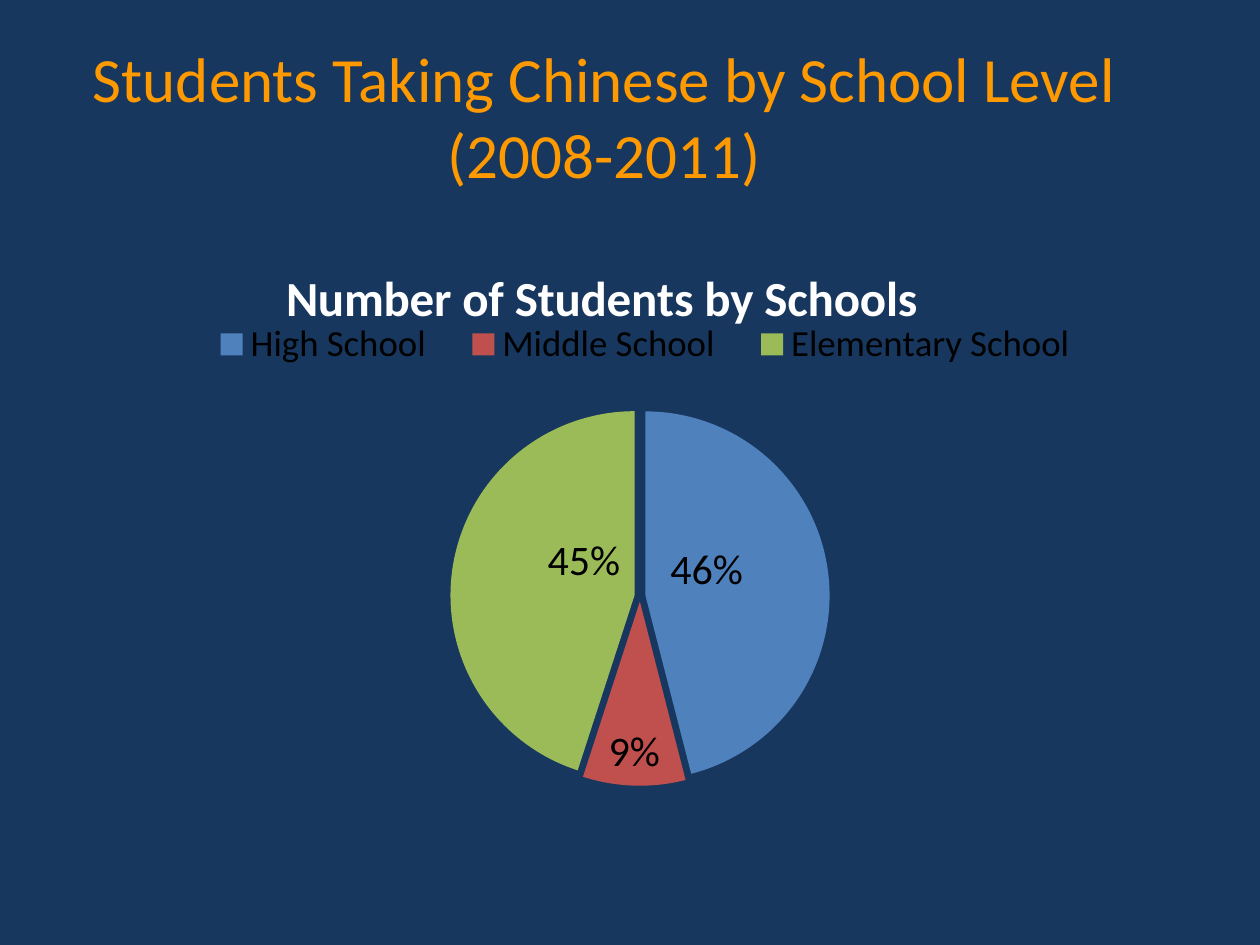
from lxml import etree
from pptx import Presentation
from pptx import util as u
from pptx.chart.data import CategoryChartData
from pptx.dml.color import RGBColor
from pptx.enum import chart as ch, text
from pptx.oxml import parse_xml
from pptx.oxml.ns import nsdecls, qn

NAVY = RGBColor(0x17, 0x37, 0x5E)
ORANGE = RGBColor(0xFF, 0x99, 0x00)
WHITE = RGBColor(0xFF, 0xFF, 0xFF)
BLACK = RGBColor(0, 0, 0)
BLUE = RGBColor(0x4F, 0x81, 0xBD)
RED = RGBColor(0xC0, 0x50, 0x4D)
GREEN = RGBColor(0x9B, 0xBB, 0x59)

SCHOOLS = [("High School", 46, BLUE), ("Middle School", 9, RED),
           ("Elementary School", 45, GREEN)]
LABEL_SHIFTS = {0: (-0.03, -0.02), 2: (0.04, -0.03)}
CHART_TITLE = "Number of Students by Schools"


def style_font(font, size, color, bold=False):
    font.name = "Calibri"
    font.size = u.Pt(size)
    font.color.rgb = color
    font.bold = bold


def manual_layout(x, y, w=None, h=None, edge=True, inner=False):
    items = [("layoutTarget", "inner")] if inner else []
    if edge:
        items += [("xMode", "edge"), ("yMode", "edge")]
    items += [("x", x), ("y", y)]
    if w:
        items += [("w", w), ("h", h)]
    body = "".join(f'<c:{name} val="{value}"/>' for name, value in items)
    return parse_xml(f'<c:layout {nsdecls("c")}><c:manualLayout>{body}'
                     '</c:manualLayout></c:layout>')


def place(parent, after, layout):
    old = parent.find(qn("c:layout"))
    if old is not None:
        parent.remove(old)
    if after is None:
        parent.insert(0, layout)
    else:
        parent.find(qn(after)).addnext(layout)


def add_title(s, words):
    sp = s.shapes.add_textbox(u.Inches(0.42), u.Inches(0.33),
                              u.Inches(8.75), u.Inches(1.17))
    tf = sp.text_frame
    tf.word_wrap = True
    tf.vertical_anchor = text.MSO_ANCHOR.MIDDLE
    p = tf.paragraphs[0]
    p.text = words
    p.alignment = text.PP_ALIGN.CENTER
    style_font(p.font, 36, ORANGE)


def style_slices(series):
    ser = series._element
    explosion = etree.Element(qn("c:explosion"), val="3")
    ser.find(qn("c:tx")).addnext(explosion)
    for i, (_, _, color) in enumerate(SCHOOLS):
        fill = series.points[i].format.fill
        fill.solid()
        fill.fore_color.rgb = color


def style_labels(series):
    labels = series.data_labels
    labels.show_value = False
    labels.show_percentage = True
    labels.number_format = "0%"
    labels.number_format_is_linked = False
    labels.position = ch.XL_LABEL_POSITION.INSIDE_END
    style_font(labels.font, 24, BLACK)
    for i, shift in LABEL_SHIFTS.items():
        label = series.points[i].data_label
        label.position = ch.XL_LABEL_POSITION.CENTER
        style_font(label.font, 24, BLACK)
    for dlbl, shift in zip(series._element.iter(qn("c:dLbl")),
                           LABEL_SHIFTS.values()):
        dlbl.find(qn("c:showVal")).set("val", "0")
        dlbl.find(qn("c:showPercent")).set("val", "1")
        place(dlbl, "c:idx", manual_layout(*shift, edge=False))


def add_pie(s):
    data = CategoryChartData()
    data.categories = [name for name, _, _ in SCHOOLS]
    data.add_series(CHART_TITLE, [value for _, value, _ in SCHOOLS])
    chart = s.shapes.add_chart(ch.XL_CHART_TYPE.PIE, u.Inches(1.08), u.Inches(1.67),
                               u.Inches(8), u.Inches(5.19), data).chart
    style_font(chart.font, 18, BLACK)

    chart.has_title = True
    p = chart.chart_title.text_frame.paragraphs[0]
    p.text = CHART_TITLE
    style_font(p.font, 28, WHITE, bold=True)
    place(chart.chart_title._element, "c:tx", manual_layout(0.14, 0.07))

    chart.has_legend = True
    chart.legend.position = ch.XL_LEGEND_POSITION.TOP
    chart.legend.include_in_layout = False
    style_font(chart.legend.font, 21, BLACK)
    place(chart.legend._element, "c:legendPos", manual_layout(0.05, 0.16, 0.91, 0.09))

    series = chart.plots[0].series[0]
    style_slices(series)
    style_labels(series)
    plot_area = chart._chartSpace.chart.plotArea
    place(plot_area, None, manual_layout(0.31, 0.3, 0.38, 0.58, inner=True))


def main():
    prs = Presentation()
    prs.slide_width, prs.slide_height = u.Inches(10), u.Inches(7.5)
    s = prs.slides.add_slide(prs.slide_layouts[6])
    s.background.fill.solid()
    s.background.fill.fore_color.rgb = NAVY
    add_title(s, "Students Taking Chinese by School Level (2008-2011)")
    add_pie(s)
    prs.save("out.pptx")


if __name__ == "__main__":
    main()
